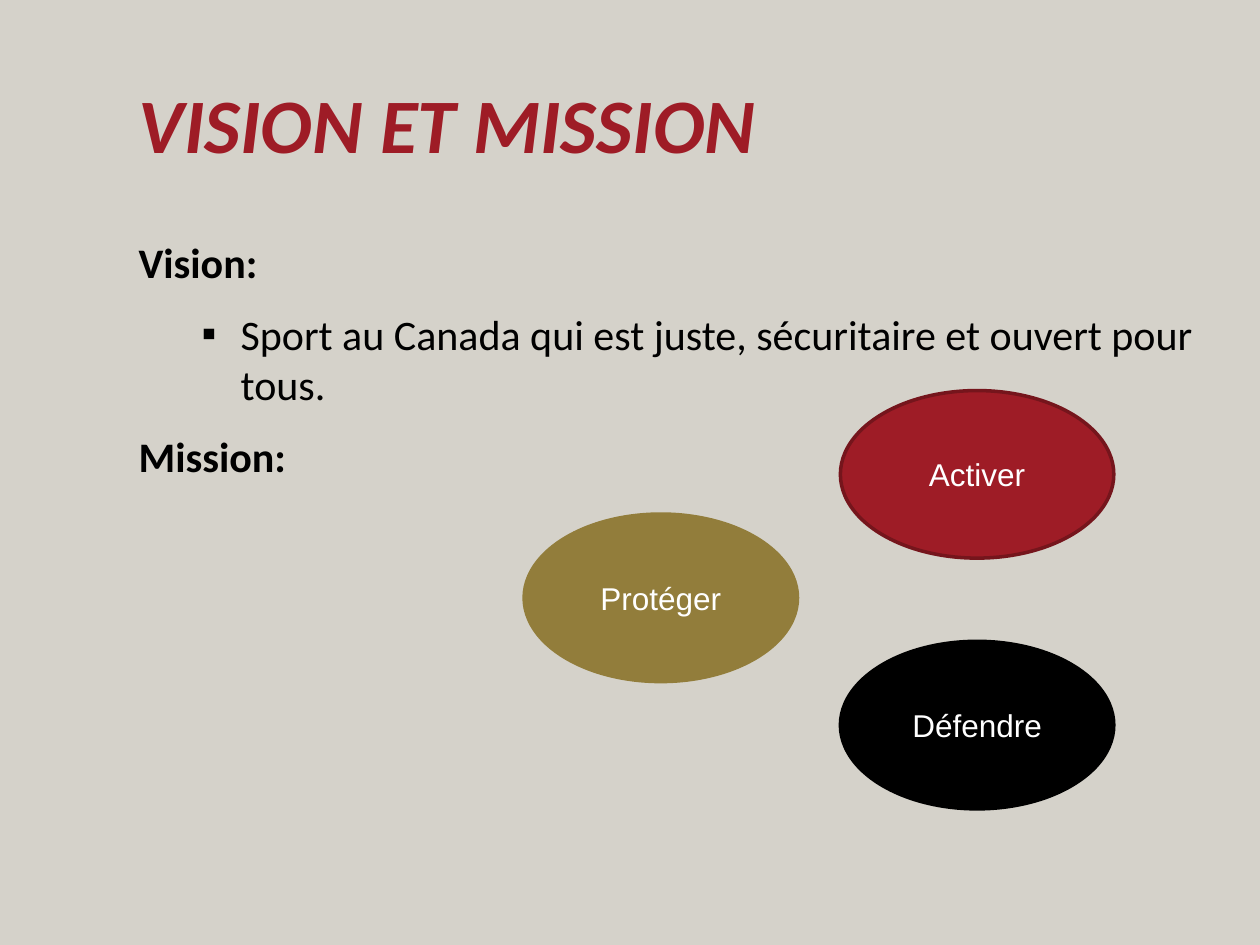
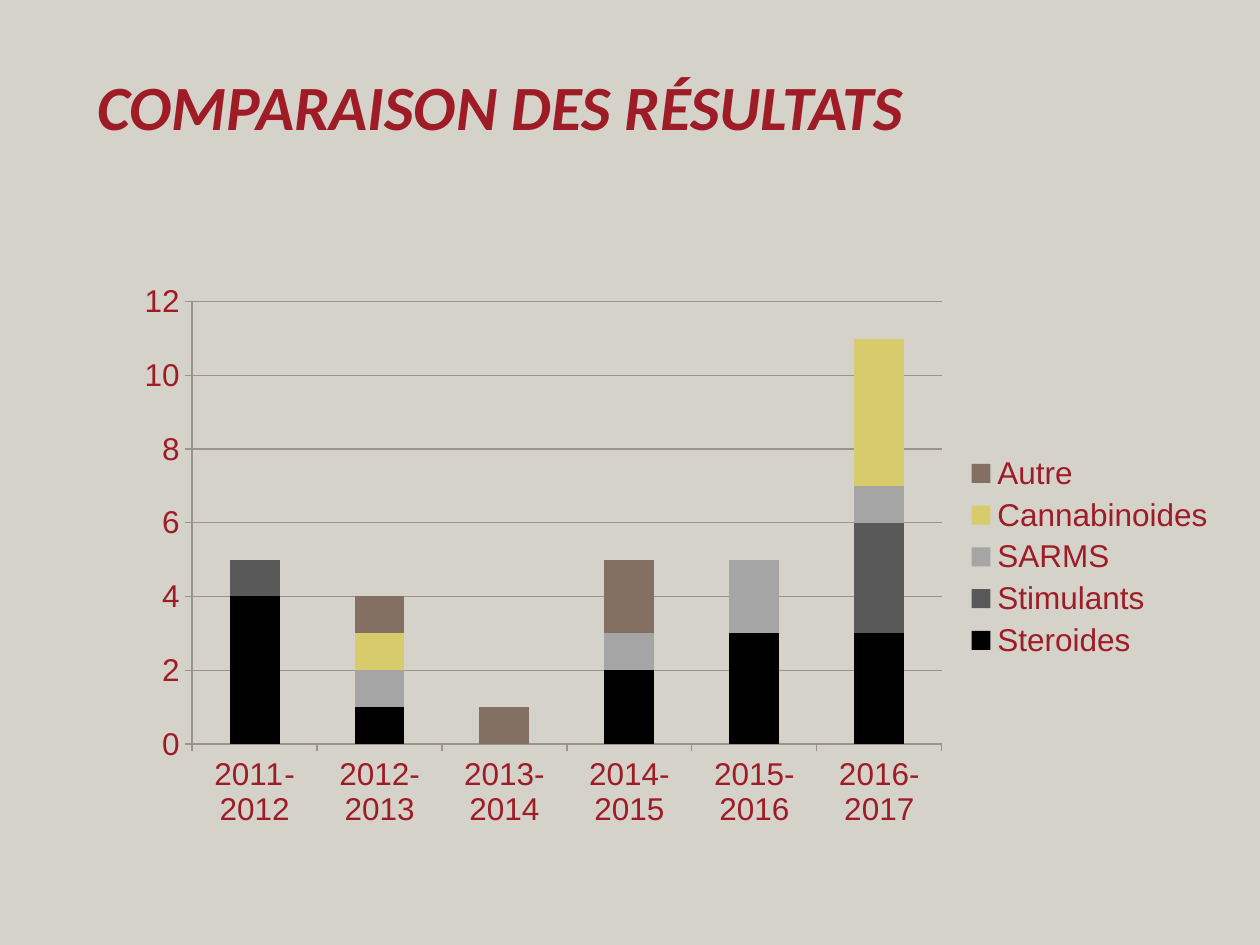
from lxml import etree
from pptx import Presentation
from pptx.chart.data import CategoryChartData
from pptx.dml.color import RGBColor
from pptx.enum.chart import XL_CHART_TYPE as ChartType, XL_LEGEND_POSITION as LegendPosition, XL_TICK_MARK as TickMark
from pptx.enum.shapes import MSO_SHAPE as Shape
from pptx.enum.text import MSO_ANCHOR as Anchor, MSO_AUTO_SIZE as AutoSize, PP_ALIGN as Align
from pptx.oxml.ns import qn
from pptx.util import Inches, Pt

COLORS = {
    "background": "D5D2CA",
    "red": "9E1C26",
    "dark_red": "75151C",
    "gold": "927D3B",
    "black": "000000",
    "white": "FFFFFF",
    "dark_gray": "595959",
    "light_gray": "A5A5A5",
    "yellow": "D8CB6C",
    "brown": "837062",
    "grid": "99948E",
}
HEADING_FONT = "Calibri"
LABEL_FONT = "Arial"
TITLE_ONLY, TITLE_AND_BODY = 5, 1

MISSION_OVALS = [
    ("Activer", 6.67, 3.1, "red", "dark_red"),
    ("Protéger", 4.16, 4.08, "gold", "gold"),
    ("Défendre", 6.67, 5.09, "black", "black"),
]
YEARS = [f"{year}-{year + 1}" for year in range(2011, 2017)]
RESULTS = [
    ("Steroides", "black", (4, 1, None, 2, 3, 3)),
    ("Stimulants", "dark_gray", (1, None, None, None, None, 3)),
    ("SARMS", "light_gray", (None, 1, None, 1, 2, 1)),
    ("Cannabinoides", "yellow", (None, 1, None, None, None, 4)),
    ("Autre", "brown", (None, 1, 1, 2, None, None)),
]


def rgb(name):
    return RGBColor.from_string(COLORS[name])


def style_font(font, name, size, color, bold=False, italic=False):
    font.name = name
    font.size = Pt(size)
    font.color.rgb = rgb(color)
    font.bold = bold
    font.italic = italic


def place(shape, left, top, width, height):
    shape.left, shape.top = Inches(left), Inches(top)
    shape.width, shape.height = Inches(width), Inches(height)


def add_slide(presentation, layout, title, position, size):
    slide = presentation.slides.add_slide(presentation.slide_layouts[layout])
    slide.background.fill.solid()
    slide.background.fill.fore_color.rgb = rgb("background")
    shape = slide.shapes.title
    place(shape, *position)
    frame = shape.text_frame
    frame.text = title
    frame.auto_size = AutoSize.NONE
    frame.vertical_anchor = Anchor.BOTTOM
    paragraph = frame.paragraphs[0]
    paragraph.alignment = Align.LEFT
    paragraph.line_spacing = 0.7
    style_font(paragraph.runs[0].font, HEADING_FONT, size, "red", bold=True, italic=True)
    return slide


def set_bullet(paragraph, character=None, margin=0, indent=0):
    properties = paragraph._p.get_or_add_pPr()
    properties.set("marL", str(Inches(margin)))
    properties.set("indent", str(Inches(indent)))
    if character:
        etree.SubElement(properties, qn("a:buChar")).set("char", character)
    else:
        etree.SubElement(properties, qn("a:buNone"))


def fill_body(slide, items):
    body = slide.placeholders[1]
    place(body, 1, 1.83, 8.75, 4.75)
    frame = body.text_frame
    frame.auto_size = AutoSize.NONE
    for index, (text, level) in enumerate(items):
        paragraph = frame.add_paragraph() if index else frame.paragraphs[0]
        paragraph.text = text
        paragraph.level = level
        if level:
            set_bullet(paragraph, "▪", 0.81, -0.31)
        else:
            set_bullet(paragraph)
        paragraph.space_before = Pt(6 if index else 0)
        paragraph.space_after = Pt(6)
        style_font(paragraph.runs[0].font, HEADING_FONT, 24, "black", bold=level == 0)


def add_oval(slide, text, left, top, fill, outline):
    oval = slide.shapes.add_shape(Shape.OVAL, Inches(left), Inches(top), Inches(2.17), Inches(1.33))
    oval.shadow.inherit = False
    oval.fill.solid()
    oval.fill.fore_color.rgb = rgb(fill)
    oval.line.color.rgb = rgb(outline)
    oval.line.width = Pt(2)
    frame = oval.text_frame
    frame.text = text
    frame.vertical_anchor = Anchor.MIDDLE
    paragraph = frame.paragraphs[0]
    paragraph.alignment = Align.CENTER
    style_font(paragraph.runs[0].font, LABEL_FONT, 18, "white")


def style_line(line):
    line.color.rgb = rgb("grid")
    line.width = Pt(0.75)


def set_plot_area(chart, **fractions):
    plot_area = chart._chartSpace.chart.plotArea
    for existing in plot_area.findall(qn("c:layout")):
        plot_area.remove(existing)
    layout = etree.Element(qn("c:layout"))
    plot_area.insert(0, layout)
    manual = etree.SubElement(layout, qn("c:manualLayout"))
    settings = {"layoutTarget": "inner", "xMode": "edge", "yMode": "edge", **fractions}
    for tag, value in settings.items():
        etree.SubElement(manual, qn(f"c:{tag}")).set("val", str(value))


def add_results_chart(slide):
    data = CategoryChartData()
    data.categories = YEARS
    for name, _, values in RESULTS:
        data.add_series(name, values)
    chart = slide.shapes.add_chart(
        ChartType.COLUMN_STACKED, Inches(1), Inches(2.17), Inches(8.75), Inches(4.5), data
    ).chart
    style_font(chart.font, LABEL_FONT, 18, "red")
    chart.has_title = False
    chart.has_legend = True
    chart.legend.position = LegendPosition.RIGHT
    chart.legend.include_in_layout = False
    set_plot_area(chart, x=0.06, y=0.05, w=0.68, h=0.78)

    plot = chart.plots[0]
    plot.gap_width = 150
    plot.overlap = 100
    plot.vary_by_categories = False
    for series, (_, color, _) in zip(plot.series, RESULTS):
        series.format.fill.solid()
        series.format.fill.fore_color.rgb = rgb(color)

    for axis in (chart.category_axis, chart.value_axis):
        axis.major_tick_mark = TickMark.OUTSIDE
        axis.minor_tick_mark = TickMark.NONE
        style_line(axis.format.line)
    values = chart.value_axis
    values.minimum_scale, values.maximum_scale, values.major_unit = 0, 12, 2
    values.has_major_gridlines = True
    style_line(values.major_gridlines.format.line)


def main():
    presentation = Presentation()
    presentation.slide_width = Inches(10)
    presentation.slide_height = Inches(7.5)

    mission = add_slide(presentation, TITLE_AND_BODY, "VISION ET MISSION", (1, 0.42, 8.08, 0.95), 44)
    fill_body(mission, [
        ("Vision:", 0),
        ("Sport au Canada qui est juste, sécuritaire et ouvert pour tous.", 1),
        ("Mission:", 0),
    ])
    for oval in MISSION_OVALS:
        add_oval(mission, *oval)

    results = add_slide(presentation, TITLE_ONLY, "COMPARAISON DES RÉSULTATS", (0.67, 0.42, 8.42, 0.75), 36)
    add_results_chart(results)

    presentation.save("out.pptx")


if __name__ == "__main__":
    main()
